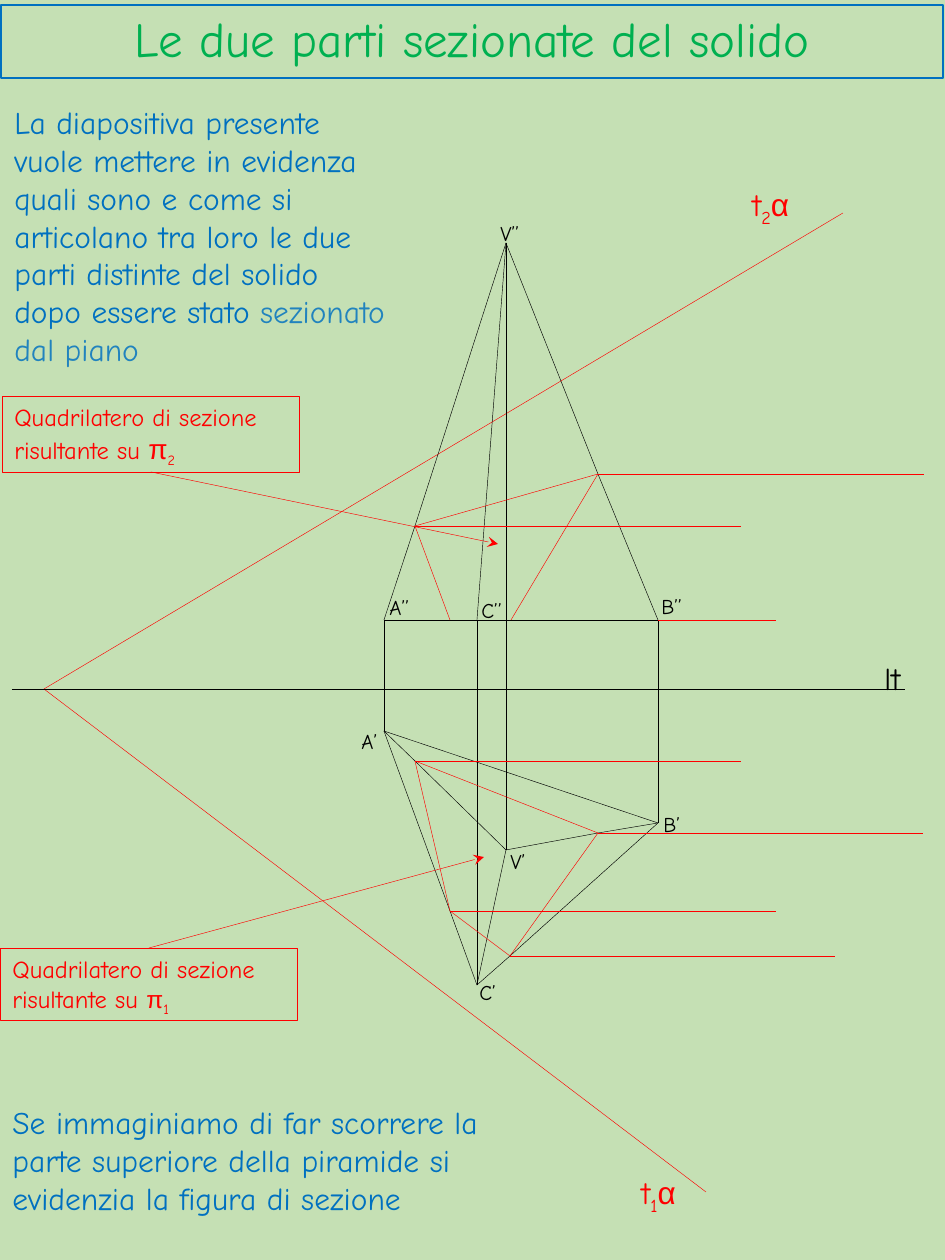
from itertools import pairwise

from lxml.etree import SubElement
from pptx import Presentation
from pptx.dml.color import RGBColor as RGB
from pptx.enum.shapes import MSO_CONNECTOR as CONN, MSO_SHAPE as SHAPE
from pptx.enum.text import MSO_ANCHOR as ANCHOR, MSO_AUTO_SIZE as AUTO, PP_ALIGN as ALIGN
from pptx.oxml.ns import qn
from pptx.util import Emu, Pt

PX = 914400 / 126


class Theme:
    font, greek = "Comic Neue", "Arial"
    paper, black, red = RGB(0xC5, 0xE0, 0xB4), RGB(0, 0, 0), RGB(0xFF, 0, 0)
    green, blue, pale_blue = RGB(0, 0xB0, 0x50), RGB(0, 0x70, 0xC0), RGB(0x21, 0x83, 0xBE)
    title, body, callout, label = 28, 18, 14, 12
    thin, frame = Pt(0.25), Pt(0.75)


def write(sp, *runs, color=Theme.black, size=Theme.body, align=ALIGN.LEFT,
          anchor=ANCHOR.TOP, auto=AUTO.SHAPE_TO_FIT_TEXT, spacing=None):
    """Fill a shape with runs: a string, or (string, dict of font, size, color, sub)."""
    tf = sp.text_frame
    tf.word_wrap, tf.auto_size, tf.vertical_anchor = True, auto, anchor
    p = tf.paragraphs[0]
    p.alignment, p.line_spacing = align, spacing
    for run in runs:
        text, own = (run, {}) if isinstance(run, str) else run
        r = p.add_run()
        r.text = text
        r.font.name = own.get("font", Theme.font)
        r.font.size = Pt(own.get("size", size))
        r.font.color.rgb = own.get("color", color)
        if own.get("sub"):
            r.font._element.set("baseline", "-25000")


def draw_line(start, end, color, arrow=False):
    cx = s.shapes.add_connector(CONN.STRAIGHT, *(Emu(round(v * PX)) for v in (*start, *end)))
    cx.line.color.rgb, cx.line.width = color, Theme.thin
    if arrow:
        SubElement(cx.line._get_or_add_ln(), qn("a:tailEnd"), type="stealth")
    SubElement(cx._element.spPr, qn("a:effectLst"))


prs = Presentation()
prs.slide_width, prs.slide_height = Emu(round(945 * PX)), Emu(round(1260 * PX))
s = prs.slides.add_slide(prs.slide_layouts[5])
s.background.fill.solid()
s.background.fill.fore_color.rgb = Theme.paper

title = s.shapes.title
title.left, title.top, title.width, title.height = (Emu(round(v * PX)) for v in (1, 5, 942, 73))
title.line.color.rgb, title.line.width = Theme.blue, Theme.frame
write(title, "Le due parti sezionate del solido", color=Theme.green, size=Theme.title,
      align=ALIGN.CENTER, anchor=ANCHOR.MIDDLE, auto=AUTO.NONE, spacing=0.9)

# Suffix 2 is the upper projection, 1 the lower; P, Q, R, S are the section corners.
points = {
    "V2": (506, 243), "A2": (384, 620), "B2": (658, 620), "C2": (477, 620),
    "P2": (415, 526), "Q2": (598, 474), "R2": (450, 620), "S2": (511, 620),
    "V1": (506, 850), "A1": (384, 731), "B1": (658, 823), "C1": (477, 985),
    "P1": (415, 761), "Q1": (598, 833), "R1": (450, 911), "S1": (510, 956),
    "O": (44, 689), "T2": (843, 213), "T1": (706, 1192),
    "L": (12, 689), "M": (905, 689),
}
paths = [
    (Theme.red, ["T2 O T1"]),
    (Theme.black, ["L M", "A2 P2 V2 Q2 B2", "V2 C2", "A2 R2 S2 B2",
                   "A2 A1", "B2 B1", "C2 C1", "V2 V1",
                   "A1 P1 V1 Q1 B1", "V1 C1", "A1 R1 C1 S1 B1", "A1 B1"]),
    (Theme.red, ["R2 P2 Q2 S2", "P1 Q1 S1 R1 P1"]),
]
for color, routes in paths:
    for route in routes:
        for a, b in pairwise(route.split()):
            draw_line(points[a], points[b], color)

ray_ends = {"Q2": 924, "P2": 741, "B2": 776, "S1": 835, "Q1": 923, "P1": 741, "R1": 776}
for name, right in ray_ends.items():
    x, y = points[name]
    draw_line((x, y), (right, y), Theme.red)

vertex_labels = [
    ("V’’", 488, 214, 49, 30), ("A’’", 377, 588, 49, 30), ("B’’", 649, 587, 49, 35),
    ("C’’", 469, 591, 49, 35), ("A’", 349, 722, 44, 30), ("B’", 651, 805, 44, 38),
    ("V’", 498, 842, 44, 38), ("C’", 467, 973, 44, 38),
]
sub, greek = {"sub": True}, {"font": Theme.greek}
texts = [((text,), box, {"size": Theme.label}) for text, *box in vertex_labels]
texts += [
    (("lt",), (872, 653, 58, 50), {}),
    (("t", ("2", sub), ("α", greek)), (740, 179, 78, 50), {"color": Theme.red}),
    (("t", ("1", sub), ("α", greek)), (629, 1167, 78, 50), {"color": Theme.red}),
    (("La diapositiva presente vuole mettere in evidenza quali sono e come si articolano "
      "tra loro le due parti distinte del solido dopo essere stato ",
      ("sezionato dal piano", {"color": Theme.pale_blue})),
     (2, 97, 402, 280), {"color": Theme.blue}),
    (("Se immaginiamo di far scorrere la parte superiore della piramide si evidenzia "
      "la figura di sezione",), (0, 1097, 507, 127), {"color": Theme.blue}),
]
for runs, box, fmt in texts:
    write(s.shapes.add_textbox(*(Emu(round(v * PX)) for v in box)), *runs, **fmt)

callouts = [
    ("2", 16, (2, 396, 297, 76), (151, 472), (498, 544)),
    ("1", 14, (0, 948, 297, 72), (149, 948), (484, 857)),
]
for index, pi_size, box, start, tip in callouts:
    sp = s.shapes.add_shape(SHAPE.RECTANGLE, *(Emu(round(v * PX)) for v in box))
    sp.shadow.inherit = False
    sp.fill.background()
    sp.line.color.rgb, sp.line.width = Theme.red, Theme.thin
    write(sp, "Quadrilatero di sezione risultante su ", ("π", {**greek, "size": pi_size}),
          (index, sub), color=Theme.red, size=Theme.callout)
    draw_line(start, tip, Theme.red, arrow=True)

prs.save("out.pptx")
